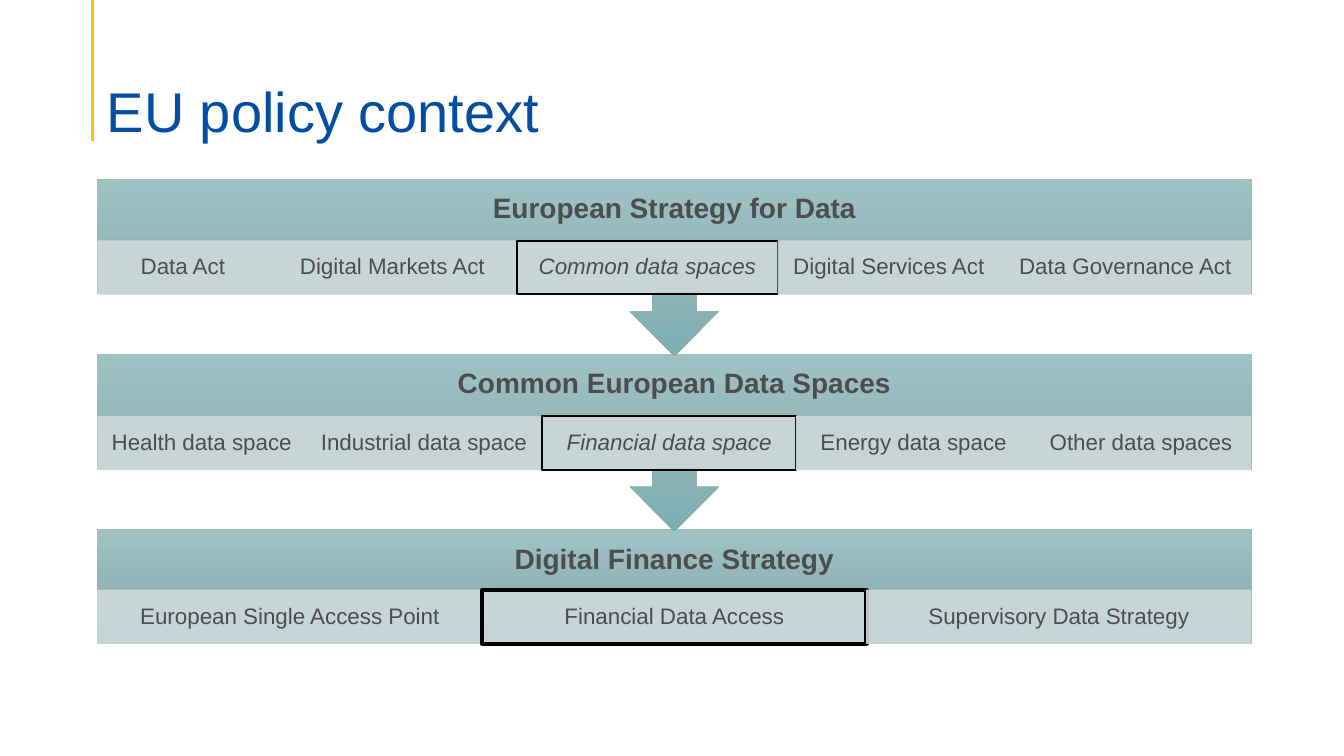
import copy

import pptx
import pptx.dml.color
import pptx.enum.shapes
import pptx.enum.text
import pptx.oxml
import pptx.oxml.ns
import pptx.util

Cm = pptx.util.Cm
Pt = pptx.util.Pt
SHAPES = pptx.enum.shapes.MSO_SHAPE
ALIGN = pptx.enum.text.PP_ALIGN
ANCHOR = pptx.enum.text.MSO_ANCHOR
qn = pptx.oxml.ns.qn

# Content: heading, cells as (text, width in cm), highlighted cell
TITLE = "EU policy context"
BANDS = [
    {"heading": "European Strategy for Data",
     "cells": [("Data Act", 4.29), ("Digital Markets Act", 6.27),
               ("Common data spaces", 6.58), ("Digital Services Act", 5.59),
               ("Data Governance Act", 6.33)],
     "highlight": 2, "outline": 1.5, "italic": True},
    {"heading": "Common European Data Spaces",
     "cells": [("Health data space", 5.24), ("Industrial data space", 5.96),
               ("Financial data space", 6.4), ("Energy data space", 5.92),
               ("Other data spaces", 5.54)],
     "highlight": 2, "outline": 1.5, "italic": True},
    {"heading": "Digital Finance Strategy",
     "cells": [("European Single Access Point", 9.69),
               ("Financial Data Access", 9.69),
               ("Supervisory Data Strategy", 9.69)],
     "highlight": 1, "outline": 3, "italic": False},
]

# Style and geometry (cm)
FONT = "Arial"
TITLE_BLUE, RULE_YELLOW, TEXT_GREY = "034EA2", "FFC000", "4D4D4D"
CELL_FILL, HIGHLIGHT = "CDD9DA", "000000"
GRADIENT = [(0, "9EC1C4"), (0.5, "92B5B9"), (1, "7DADB1")]
BAND_LEFT, BAND_TOP, BAND_WIDTH, BAND_PITCH = 2.44, 4.5, 29.11, 4.42
BODY_HEIGHT, CALLOUT_HEIGHT = 2.9, 4.47
CELL_HEIGHT = 1.35


def rgb(value):
    return pptx.dml.color.RGBColor.from_string(value)


def set_text(shape, text, size, color, insets, align=ALIGN.CENTER,
             anchor=ANCHOR.MIDDLE, bold=False, italic=False):
    frame = shape.text_frame
    frame.text = text
    frame.word_wrap = True
    frame.auto_size = pptx.enum.text.MSO_AUTO_SIZE.NONE
    frame.vertical_anchor = anchor
    (frame.margin_left, frame.margin_top,
     frame.margin_right, frame.margin_bottom) = [Cm(inset) for inset in insets]
    paragraph = frame.paragraphs[0]
    paragraph.alignment = align
    paragraph.line_spacing = 0.9
    font = paragraph.runs[0].font
    font.name, font.size = FONT, Pt(size)
    font.bold, font.italic = bold, italic
    font.color.rgb = rgb(color)


def set_gradient(shape):
    shape.fill.gradient()
    shape.fill.gradient_angle = 270
    stop_list = shape._element.spPr.find(".//" + qn("a:gsLst"))
    stop_list.insert(1, copy.deepcopy(stop_list[0]))
    for stop, (position, color) in zip(shape.fill.gradient_stops, GRADIENT):
        stop.position = position
        stop.color.rgb = rgb(color)


def set_opacity(shape, percent):
    for color in shape._element.spPr.iter(qn("a:srgbClr")):
        if color.get("val") == CELL_FILL:
            alpha = pptx.oxml.parse_xml(
                '<a:alpha xmlns:a="http://schemas.openxmlformats.org/'
                f'drawingml/2006/main" val="{percent * 1000}"/>')
            color.append(alpha)


def add_cell(slide, left, top, width, text, band, highlighted):
    cell = slide.shapes.add_shape(
        SHAPES.RECTANGLE, Cm(left), Cm(top), Cm(width), Cm(CELL_HEIGHT))
    cell.shadow.inherit = False
    cell.fill.solid()
    cell.fill.fore_color.rgb = rgb(CELL_FILL)
    cell.line.color.rgb = rgb(HIGHLIGHT if highlighted else CELL_FILL)
    cell.line.width = Pt(band["outline"] if highlighted else 0.5)
    set_opacity(cell, 90)
    set_text(cell, text, 16, TEXT_GREY, (0.3, 0.05, 0.3, 0.05),
             italic=highlighted and band["italic"])


def add_band(slide, index, band):
    last = index == len(BANDS) - 1
    top = BAND_TOP + index * BAND_PITCH
    heading = slide.shapes.add_shape(
        SHAPES.RECTANGLE if last else SHAPES.DOWN_ARROW_CALLOUT,
        Cm(BAND_LEFT), Cm(top), Cm(BAND_WIDTH),
        Cm(BODY_HEIGHT if last else CALLOUT_HEIGHT))
    heading.shadow.inherit = False
    heading.line.fill.background()
    set_gradient(heading)
    set_text(heading, band["heading"], 20, TEXT_GREY,
             (0.4, 0, 0.4, CELL_HEIGHT), bold=True)

    # Cells run left to right, centred under the heading
    left = BAND_LEFT + (BAND_WIDTH - sum(width for _, width in band["cells"])) / 2
    cell_top = top + (1.53 if last else 1.57)
    for number, (text, width) in enumerate(band["cells"]):
        add_cell(slide, left, cell_top, width, text, band,
                 number == band["highlight"])
        left += width


def main():
    presentation = pptx.Presentation()
    presentation.slide_width, presentation.slide_height = Cm(33.87), Cm(19.05)
    slide = presentation.slides.add_slide(presentation.slide_layouts[5])

    # Title and the rule beside it
    rule = slide.shapes.add_connector(
        pptx.enum.shapes.MSO_CONNECTOR.STRAIGHT,
        Cm(2.34), Cm(0), Cm(2.34), Cm(3.56))
    rule.line.color.rgb = rgb(RULE_YELLOW)
    rule.line.width = Pt(2.25)
    rule._element.spPr.append(pptx.oxml.parse_xml(
        '<a:effectLst xmlns:a="http://schemas.openxmlformats.org/'
        'drawingml/2006/main"/>'))
    title = slide.shapes.title
    title.left, title.top = Cm(2.44), Cm(1.47)
    title.width, title.height = Cm(30.3), Cm(2.18)
    set_text(title, TITLE, 40, TITLE_BLUE, (0.25, 0.13, 0.25, 0),
             ALIGN.LEFT, ANCHOR.BOTTOM)

    # Bands from the bottom up, so each arrow tip lies over the next band
    for index, band in reversed(list(enumerate(BANDS))):
        add_band(slide, index, band)

    presentation.save("out.pptx")


if __name__ == "__main__":
    main()
